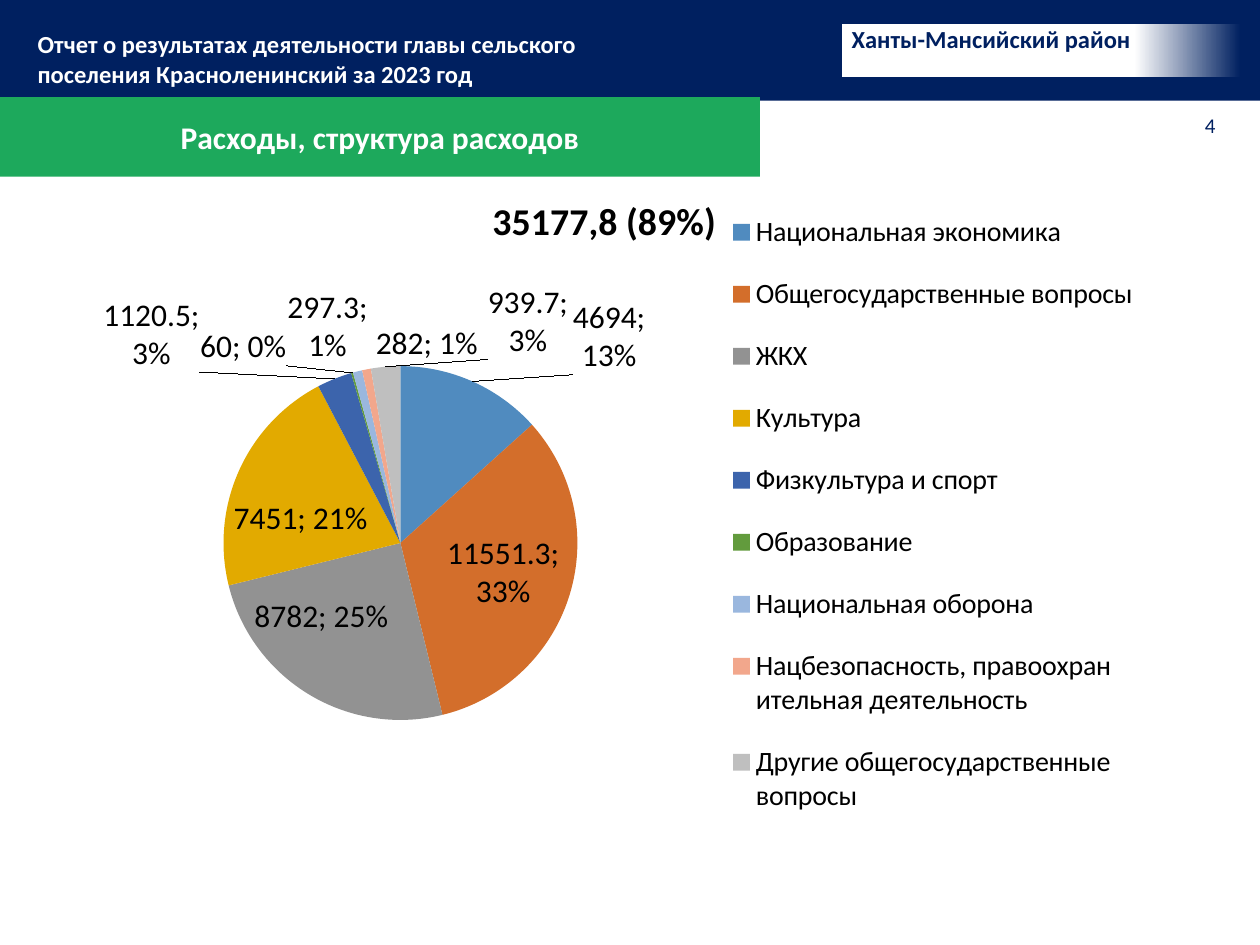
from dataclasses import dataclass

from lxml import etree
from pptx import Presentation
from pptx import util as u
from pptx.chart import data as chart_data
from pptx.dml import color
from pptx.enum import chart as chart_enum
from pptx.enum import shapes, text
from pptx.oxml import ns

COLORS = {
    "navy": "002060", "green": "1DA95C", "white": "FFFFFF", "black": "000000",
    "blue": "508BBF", "orange": "D36E2B", "gray": "929292",
    "gold": "E2AA00", "royal": "3C64AC", "leaf": "629B3D",
    "light blue": "9AB7DE", "salmon": "F2A78C", "silver": "BFBFBF",
}
FONT = "Calibri"
TOTAL = "35177,8 (89%)"
ONE_LINE, TWO_LINES = "; ", ";\n"


@dataclass
class Frame:
    left: float
    top: float
    width: float
    height: float

    def lengths(self) -> list:
        return [u.Cm(side) for side in (self.left, self.top, self.width, self.height)]


@dataclass
class Expense:
    name: str
    amount: float
    color: str
    label_shift: float | None = None
    separator: str = ONE_LINE


EXPENSES = [
    Expense("Национальная экономика", 4694, "blue", 0.09, TWO_LINES),
    Expense("Общегосударственные вопросы", 11551.3, "orange"),
    Expense("ЖКХ", 8782, "gray"),
    Expense("Культура", 7451, "gold"),
    Expense("Физкультура и спорт", 1120.5, "royal", -0.122, TWO_LINES),
    Expense("Образование", 60, "leaf", -0.059),
    Expense("Национальная оборона", 297.3, "light blue", 0.011, TWO_LINES),
    Expense("Нацбезопасность, правоохран ительная деятельность", 282, "salmon", 0.104),
    Expense("Другие общегосударственные вопросы", 939.7, "silver", 0.132, TWO_LINES),
]


def rgb(name: str) -> color.RGBColor:
    return color.RGBColor.from_string(COLORS[name])


def write(box, words: str, *, size: float, fill: str = "white", bold: bool = True,
          align=text.PP_ALIGN.LEFT, anchor=text.MSO_ANCHOR.TOP,
          inset_x: float = 0.25, inset_y: float = 0.13) -> None:
    body = box.text_frame
    body.word_wrap = True
    body.auto_size = text.MSO_AUTO_SIZE.NONE
    body.vertical_anchor = anchor
    body.margin_left = body.margin_right = u.Cm(inset_x)
    body.margin_top = body.margin_bottom = u.Cm(inset_y)
    para = body.paragraphs[0]
    para.alignment = align
    span = para.add_run()
    span.text = words
    span.font.name, span.font.size, span.font.bold = FONT, u.Pt(size), bold
    span.font.color.rgb = rgb(fill)


def add_bar(slide, frame: Frame):
    bar = slide.shapes.add_shape(shapes.MSO_SHAPE.RECTANGLE, *frame.lengths())
    bar.shadow.inherit = False
    bar.line.fill.background()
    return bar


def chart_element(tag: str, value: str | None = None):
    element = etree.Element(ns.qn(f"c:{tag}"))
    if value is not None:
        element.set("val", value)
    return element


def manual_layout(**values: str):
    layout = chart_element("layout")
    manual = chart_element("manualLayout")
    layout.append(manual)
    for tag, value in values.items():
        manual.append(chart_element(tag, value))
    return layout


def set_separator(labels, words: str) -> None:
    separator = chart_element("separator")
    separator.text = words
    labels.find(ns.qn("c:showBubbleSize")).addnext(separator)


def place_area(area, position: int, **values: str) -> None:
    for old in area.findall(ns.qn("c:layout")):
        area.remove(old)
    area.insert(position, manual_layout(**values))


def label_slices(series) -> None:
    labels = series.data_labels
    labels.show_value = labels.show_percentage = True
    labels.number_format, labels.number_format_is_linked = "General", False
    labels.position = chart_enum.XL_LABEL_POSITION.BEST_FIT
    labels.font.size, labels.font.name = u.Pt(18), FONT
    for index, expense in enumerate(EXPENSES):
        point = series.points[index]
        point.format.fill.solid()
        point.format.fill.fore_color.rgb = rgb(expense.color)
        if expense.label_shift is not None:
            point.data_label.position = chart_enum.XL_LABEL_POSITION.OUTSIDE_END


def finish_labels(plot_area) -> None:
    group = plot_area.find(f".//{ns.qn('c:ser')}/{ns.qn('c:dLbls')}")
    set_separator(group, ONE_LINE)
    for label in group.findall(ns.qn("c:dLbl")):
        index = label.find(ns.qn("c:idx"))
        expense = EXPENSES[int(index.get("val"))]
        index.addnext(manual_layout(x=str(expense.label_shift), y="0"))
        label.find(ns.qn("c:showPercent")).set("val", "1")
        set_separator(label, expense.separator)


def add_expense_pie(slide, frame: Frame) -> None:
    data = chart_data.CategoryChartData()
    data.categories = [expense.name for expense in EXPENSES]
    data.add_series(TOTAL, [expense.amount for expense in EXPENSES])
    chart = slide.shapes.add_chart(
        chart_enum.XL_CHART_TYPE.PIE, *frame.lengths(), data).chart
    chart.font.name, chart.font.size = FONT, u.Pt(18)
    chart.font.color.rgb = rgb("black")
    chart.has_title = True
    span = chart.chart_title.text_frame.paragraphs[0].add_run()
    span.text = TOTAL
    span.font.name, span.font.size, span.font.bold = FONT, u.Pt(21.6), True
    chart.has_legend = True
    chart.legend.position = chart_enum.XL_LEGEND_POSITION.RIGHT
    chart.legend.include_in_layout = False
    chart.legend.font.size, chart.legend.font.name = u.Pt(16), FONT
    plot = chart.plots[0]
    plot.vary_by_categories = True
    label_slices(plot.series[0])

    plot_area = chart.element.find(f".//{ns.qn('c:plotArea')}")
    finish_labels(plot_area)
    place_area(plot_area, 0, layoutTarget="inner", xMode="edge", yMode="edge",
               x="0.148", y="0.284", w="0.327", h="0.53")
    place_area(chart.element.find(f".//{ns.qn('c:legend')}"), 1, xMode="edge",
               yMode="edge", x="0.608", y="0.016", w="0.39", h="0.98")
    place_area(chart.element.find(f".//{ns.qn('c:title')}"), 1, xMode="edge",
               yMode="edge", x="0.39", y="0.016")


def main() -> None:
    deck = Presentation()
    deck.slide_width, deck.slide_height = u.Cm(25.4), u.Cm(19.05)
    slide = deck.slides.add_slide(deck.slide_layouts[5])

    header = add_bar(slide, Frame(0, 0, 25.4, 2.03))
    header.fill.solid()
    header.fill.fore_color.rgb = rgb("navy")

    district = add_bar(slide, Frame(16.97, 0.48, 8.2, 1.07))
    district.fill.gradient()
    district.fill.gradient_angle = 180
    for stop, (name, position) in zip(district.fill.gradient_stops,
                                      (("navy", 0.02), ("white", 0.28))):
        stop.color.rgb, stop.position = rgb(name), position
    write(district, "Ханты-Мансийский район", size=14, fill="navy",
          inset_x=0.2, inset_y=0)

    report = slide.shapes.add_textbox(*Frame(0.51, 0.46, 11.86, 1.45).lengths())
    write(report, "Отчет о результатах деятельности главы сельского поселения "
          "Красноленинский за 2023 год", size=14)
    number = slide.shapes.add_textbox(*Frame(23.95, 2.13, 1.22, 0.76).lengths())
    write(number, "4", size=12, fill="navy", bold=False, inset_x=0.34)

    title = slide.shapes.title
    title.left, title.top, title.width, title.height = Frame(0, 1.96, 15.32, 1.6).lengths()
    title.fill.solid()
    title.fill.fore_color.rgb = rgb("green")
    write(title, "Расходы, структура расходов", size=18,
          align=text.PP_ALIGN.CENTER, anchor=text.MSO_ANCHOR.MIDDLE)
    title.element.getparent().append(title.element)

    add_expense_pie(slide, Frame(1.27, 3.56, 21.84, 13.46))
    deck.save("out.pptx")


if __name__ == "__main__":
    main()
